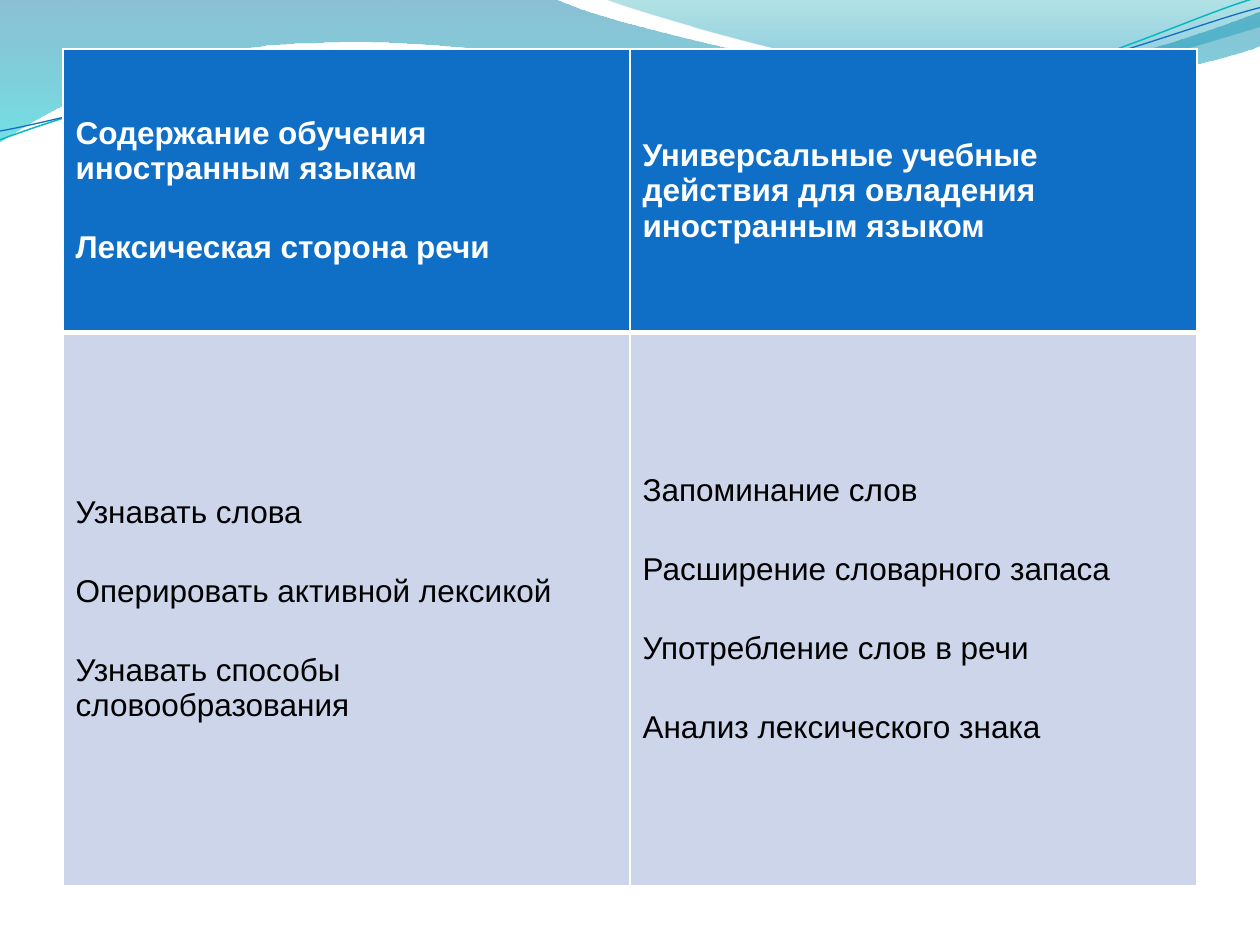
import math
import pptx
import pptx.util
import pptx.dml.color
import pptx.enum.text
import pptx.oxml.ns
from lxml import etree

Inches, Pt, qn = pptx.util.Inches, pptx.util.Pt, pptx.oxml.ns.qn
TILT = 357.3
BANDS = [
    ((-0.01, -0.01, 10.02, 1.14),
     [(0, -0.01), (4.4, -0.01),
      (4.76, 0.17, 6.64, 0.63, 7.58, 0.63), (8.53, 0.63, 9.58, 0.26, 10, 0.09),
      (10.01, 0.36),
      (9.83, 0.44, 8.7, 0.76, 7.46, 0.75), (6.22, 0.75, 3.82, 0.28, 2.57, 0.34),
      (1.29, 0.35, 0.46, 0.83, -0.01, 1.13), (0, -0.01)],
     [(0, "0074A1", 45), (1, "00C6CF", 55)]),
    ((4.79, -0.01, 5.21, 0.7),
     [(4.79, -0.01),
      (5.09, 0.11, 6.82, 0.62, 7.69, 0.65), (8.56, 0.69, 9.61, 0.32, 10, 0.21),
      (10, 0), (4.79, -0.01)],
     [(0, "00A1A9", 30), (0.8, "008BBF", 45)]),
]
WAVES = [
    ((-0.02, 0.22, 10.02, 0.71),
     [(0, 1.11), (0.48, 0.93, 1.58, 0.57, 2.77, 0.52),
      (3.95, 0.47, 5.93, 0.89, 7.13, 0.8), (8.33, 0.71, 9.38, 0.15, 9.98, -0.02)],
     "0AB8BF", 0.85),
    ((-0.02, 0.3, 10.03, 0.58),
     [(0, 1.04), (0.47, 0.96, 1.64, 0.61, 2.83, 0.56),
      (4.03, 0.51, 5.97, 0.83, 7.17, 0.75), (8.36, 0.67, 9.41, 0.21, 10, 0.06)],
     "0F6FC6", 0.75),
]
ROWS = [
    {"high": 2.25, "fill": "0F6FC6", "ink": "FFFFFF", "bold": True,
     "edge": {"L": 1, "R": 1, "T": 1, "B": 3},
     "cells": [["Содержание обучения иностранным языкам", "Лексическая сторона речи"],
               ["Универсальные учебные действия для овладения иностранным языком"]]},
    {"high": 4.39, "fill": "CCD5EA", "ink": "000000", "bold": False,
     "edge": {"L": 1, "R": 1, "T": 3, "B": 1},
     "cells": [["Узнавать слова", "Оперировать активной лексикой",
                "Узнавать способы словообразования"],
               ["Запоминание слов", "Расширение словарного запаса",
                "Употребление слов в речи", "Анализ лексического знака"]]},
]


def color(text):
    return pptx.dml.color.RGBColor.from_string(text)


def turn(x, y, box, angle):
    left, top, wide, high = box
    a = math.radians(angle)
    dx, dy = x - left - wide / 2, y - top - high / 2
    return (wide / 2 + dx * math.cos(a) - dy * math.sin(a),
            high / 2 + dx * math.sin(a) + dy * math.cos(a))


def draw(slide, box, parts, close=False, tilt=0):
    left, top, wide, high = map(Inches, box)
    pen = slide.shapes.build_freeform(left, top)
    pen.add_line_segments([(left + wide, top + high)], close=close)
    shape = pen.convert_to_shape()
    shape.rotation = tilt
    shape.shadow.inherit = False
    path = next(shape.element.iter(qn("a:path")))
    for node in list(path):
        path.remove(node)
    for i, part in enumerate(parts):
        kind = "cubicBezTo" if len(part) > 2 else "lnTo" if i else "moveTo"
        step = etree.SubElement(path, qn("a:" + kind))
        for x, y in zip(part[::2], part[1::2]):
            x, y = turn(x, y, box, -tilt)
            etree.SubElement(step, qn("a:pt"), x=str(Inches(x)), y=str(Inches(y)))
    if close:
        etree.SubElement(path, qn("a:close"))
    return shape


def band(slide, box, parts, stops):
    shape = draw(slide, box, parts, close=True)
    shape.line.fill.background()
    shape.fill.gradient()
    shape.fill.gradient_angle = 270
    for stop, (pos, tint, _) in zip(shape.fill.gradient_stops, stops):
        stop.position = pos
        stop.color.rgb = color(tint)
    for node, (_, _, alpha) in zip(shape.element.iter(qn("a:srgbClr")), stops):
        etree.SubElement(node, qn("a:alpha"), val=str(alpha * 1000))


def wave(slide, box, parts, tint, width):
    shape = draw(slide, box, parts, tilt=TILT)
    shape.fill.background()
    shape.line.color.rgb = color(tint)
    shape.line.width = Pt(width)


def write(frame, lines, size=18, font="Arial", ink="000000", bold=False, gap=25):
    frame.word_wrap = True
    for i, line in enumerate(lines):
        para = frame.add_paragraph() if i else frame.paragraphs[0]
        para.space_before = Pt(gap if i else 0)
        run = para.add_run()
        run.text = line
        run.font.size = Pt(size)
        run.font.name = font
        run.font.bold = bold
        run.font.color.rgb = color(ink)


def border(cell, edge, tint="FFFFFF"):
    props = cell._tc.get_or_add_tcPr()
    for i, (side, width) in enumerate(edge.items()):
        line = etree.Element(qn("a:ln" + side), w=str(Pt(width)))
        fill = etree.SubElement(line, qn("a:solidFill"))
        etree.SubElement(fill, qn("a:srgbClr"), val=tint)
        props.insert(i, line)


def grid(slide):
    high = sum(row["high"] for row in ROWS)
    table = slide.shapes.add_table(len(ROWS), 2, Inches(0.5), Inches(0.39),
                                   Inches(9), Inches(high)).table
    for r, row in enumerate(ROWS):
        table.rows[r].height = Inches(row["high"])
        for c, lines in enumerate(row["cells"]):
            cell = table.cell(r, c)
            cell.vertical_anchor = pptx.enum.text.MSO_ANCHOR.MIDDLE
            cell.fill.solid()
            cell.fill.fore_color.rgb = color(row["fill"])
            border(cell, row["edge"])
            write(cell.text_frame, lines, ink=row["ink"], bold=row["bold"])


def main():
    deck = pptx.Presentation()
    deck.slide_width, deck.slide_height = Inches(10), Inches(7.5)
    slide = deck.slides.add_slide(deck.slide_layouts[6])
    for item in BANDS:
        band(slide, *item)
    for item in WAVES:
        wave(slide, *item)
    grid(slide)
    deck.save("out.pptx")


if __name__ == "__main__":
    main()
